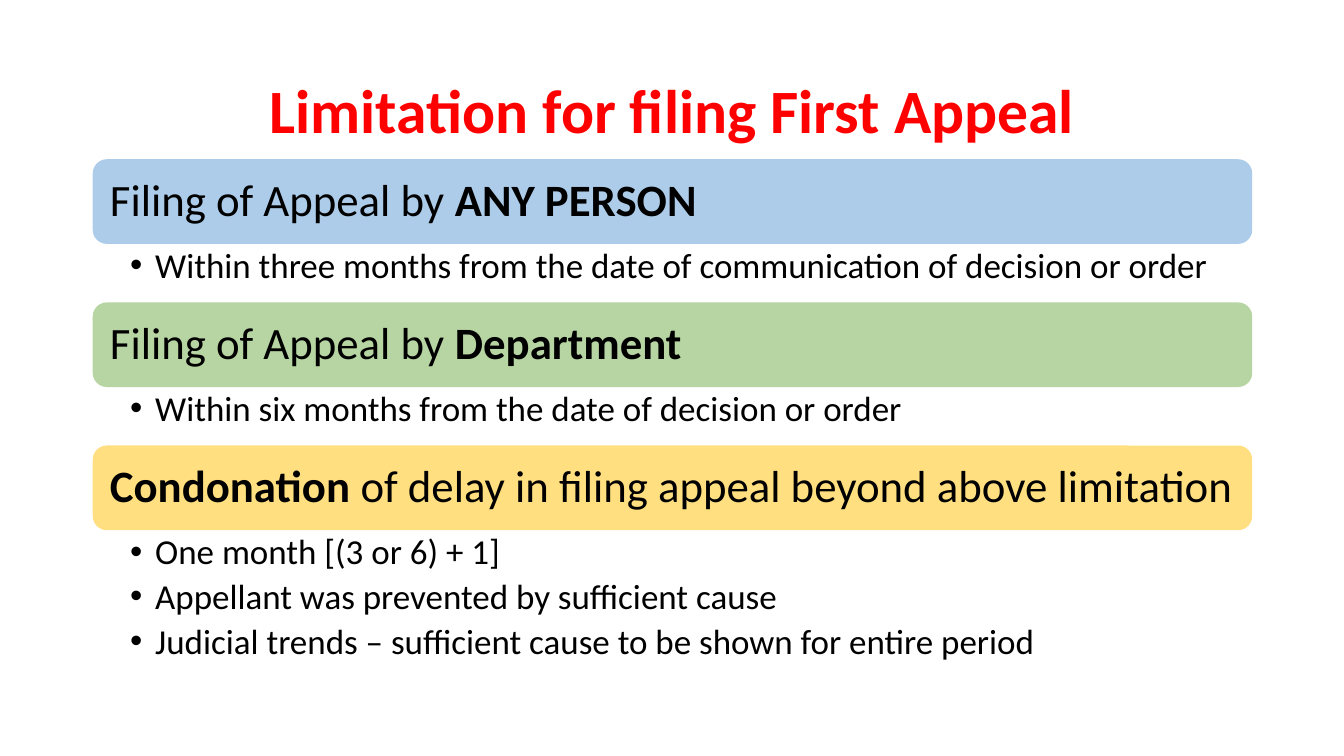
import pptx
import pptx.util
import pptx.dml.color
import pptx.enum.shapes
import pptx.enum.text
import pptx.oxml
import pptx.oxml.ns
from lxml import etree

Inches = pptx.util.Inches
Pt = pptx.util.Pt
RGB = pptx.dml.color.RGBColor.from_string
ANCHOR = pptx.enum.text.MSO_ANCHOR
ALIGN = pptx.enum.text.PP_ALIGN

TITLE = "Limitation for filing First Appeal"
# Each section: heading runs as (text, bold), bar colour name, details
SECTIONS = [
    ([("Filing of Appeal by ", False), ("ANY PERSON", True)], "person",
     ["Within three months from the date of communication of decision or order"]),
    ([("Filing of Appeal by ", False), ("Department", True)], "department",
     ["Within six months from the date of decision or order"]),
    ([("Condonation", True),
      (" of delay in filing appeal beyond above limitation", False)], "condonation",
     ["One month [(3 or 6) + 1]",
      "Appellant was prevented by sufficient cause",
      "Judicial trends – sufficient cause to be shown for entire period"]),
]

THEME = {
    "font": "Calibri",
    "title": "FF0000", "text": "000000",
    "person": "5B9BD5", "department": "70AD47", "condonation": "FFC000",
    "bar_opacity": 50,
    "title_size": 44, "heading_size": 32, "detail_size": 25,
}

LEFT, WIDTH = 0.92, 11.5
TITLE_TOP, TITLE_HEIGHT = 0.4, 1.45
FIRST_BAR_TOP, BAR_HEIGHT = 1.58, 0.84
DETAIL_HEIGHT, EXTRA_DETAIL = 0.58, 0.415


def set_frame(frame, anchor, insets):
    """Wrap the text and set its insets: left, top, right, bottom."""
    frame.word_wrap = True
    frame.vertical_anchor = anchor
    (frame.margin_left, frame.margin_top,
     frame.margin_right, frame.margin_bottom) = map(Inches, insets)


def style(paragraph, size, color="text", bold=None, align=ALIGN.LEFT, after=0):
    paragraph.alignment = align
    paragraph.line_spacing = 0.9
    paragraph.space_after = Pt(after)
    font = paragraph.font
    font.name = THEME["font"]
    font.size = Pt(THEME[size])
    font.bold = bold
    font.color.rgb = RGB(THEME[color])


def add_bullet(paragraph):
    properties = paragraph._p.get_or_add_pPr()
    properties.set("marL", str(Inches(0.25)))
    properties.set("indent", str(Inches(-0.25)))
    qn = pptx.oxml.ns.qn
    etree.SubElement(properties, qn("a:buFont")).set("typeface", "Arial")
    etree.SubElement(properties, qn("a:buChar")).set("char", "•")


def add_text_area(slide, top, height):
    return slide.shapes.add_textbox(
        Inches(LEFT), Inches(top), Inches(WIDTH), Inches(height)).text_frame


def add_title(slide):
    frame = add_text_area(slide, TITLE_TOP, TITLE_HEIGHT)
    set_frame(frame, ANCHOR.MIDDLE, (0.1, 0.05, 0.1, 0.05))
    heading = frame.paragraphs[0]
    heading.text = TITLE
    style(heading, "title_size", "title", bold=True, align=ALIGN.CENTER)


def add_bar(slide, top, heading_runs, color):
    bar = slide.shapes.add_shape(
        pptx.enum.shapes.MSO_SHAPE.ROUNDED_RECTANGLE,
        Inches(LEFT), Inches(top), Inches(WIDTH), Inches(BAR_HEIGHT))
    bar.shadow.inherit = False
    bar.line.fill.background()
    bar.fill.solid()
    bar.fill.fore_color.rgb = RGB(THEME[color])
    qn = pptx.oxml.ns.qn
    tint = bar.fill._xPr.find(qn("a:solidFill")).find(qn("a:srgbClr"))
    etree.SubElement(tint, qn("a:alpha")).set("val", str(THEME["bar_opacity"] * 1000))
    set_frame(bar.text_frame, ANCHOR.MIDDLE, (0.13,) * 4)
    heading = bar.text_frame.paragraphs[0]
    for text, bold in heading_runs:
        run = heading.add_run()
        run.text = text
        run.font.bold = bold
    style(heading, "heading_size")


def add_details(slide, top, height, details):
    frame = add_text_area(slide, top, height)
    set_frame(frame, ANCHOR.TOP, (0.37, 0.04, 0.25, 0.04))
    for index, detail in enumerate(details):
        paragraph = frame.add_paragraph() if index else frame.paragraphs[0]
        paragraph.text = detail
        paragraph.level = 1
        add_bullet(paragraph)
        style(paragraph, "detail_size", after=5)


def main():
    deck = pptx.Presentation()
    deck.slide_width, deck.slide_height = Inches(13.33), Inches(7.5)
    slide = deck.slides.add_slide(deck.slide_layouts[6])
    add_title(slide)
    top = FIRST_BAR_TOP
    for heading_runs, color, details in SECTIONS:
        add_bar(slide, top, heading_runs, color)
        top += BAR_HEIGHT
        height = DETAIL_HEIGHT + EXTRA_DETAIL * (len(details) - 1)
        add_details(slide, top, height, details)
        top += height
    deck.save("out.pptx")


if __name__ == "__main__":
    main()
